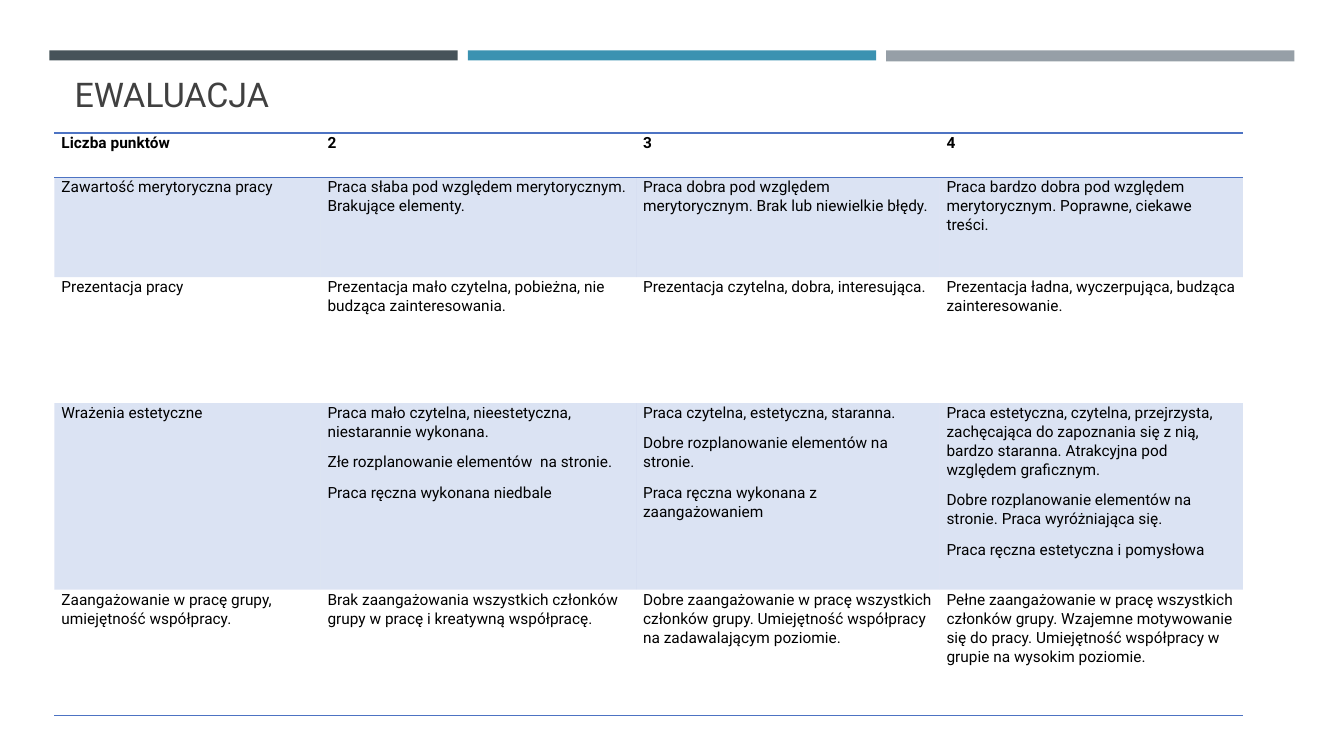
from dataclasses import dataclass

from lxml.etree import SubElement
from pptx import Presentation
from pptx.dml.color import RGBColor
from pptx.enum.shapes import MSO_AUTO_SHAPE_TYPE as ShapeType
from pptx.enum.text import MSO_ANCHOR as Anchor, MSO_AUTO_SIZE as AutoSize, PP_ALIGN as Align
from pptx.oxml.ns import qn
from pptx.slide import Slide
from pptx.table import _Cell as Cell
from pptx.util import Emu, Inches, Pt

WIDTH, HEIGHT = Inches(13.33), Inches(7.5)
FONT = "Roboto"
ACCENT = "4D73C3"
PLAIN_TABLE = "{2D5ABB26-0587-4C30-8999-92F81FD0307C}"
BAR_LEFT, BAR_STEP, BAR_WIDTH = 3.68, 31.13, 30.38
COLUMN_SHARES = (19.8, 23.48, 22.58, 22.58)
PARAGRAPH_FORMAT = {"line_spacing": 1.06, "space_after": Pt(8), "alignment": Align.LEFT}
CELL_FORMAT = {
    "margin_left": Inches(0.07),
    "margin_right": Inches(0.07),
    "margin_top": 0,
    "margin_bottom": 0,
    "vertical_anchor": Anchor.TOP,
}


@dataclass(frozen=True)
class Bar:
    color: str
    height: float


@dataclass(frozen=True)
class Criterion:
    height: float
    texts: tuple[str, ...]
    bold: bool = False
    shaded: bool = False
    borders: tuple[str, ...] = ()


BARS = (Bar("465359", 1.33), Bar("3B92B1", 1.33), Bar("969FA7", 1.47))
CRITERIA = (
    Criterion(5.87, ("Liczba punktów", "2", "3", "4"), bold=True, borders=("lnT", "lnB")),
    Criterion(13.2, (
        "Zawartość merytoryczna pracy",
        "Praca słaba pod względem merytorycznym. Brakujące elementy.",
        "Praca dobra pod względem merytorycznym. Brak lub niewielkie błędy.",
        "Praca bardzo dobra pod względem merytorycznym. Poprawne, ciekawe treści.",
    ), shaded=True),
    Criterion(16.67, (
        "Prezentacja pracy",
        "Prezentacja mało czytelna, pobieżna, nie budząca zainteresowania.",
        "Prezentacja czytelna, dobra, interesująca.",
        "Prezentacja ładna, wyczerpująca, budząca zainteresowanie.",
    )),
    Criterion(24.67, (
        "Wrażenia estetyczne",
        "Praca mało czytelna, nieestetyczna, niestarannie wykonana.\n"
        "Złe rozplanowanie elementów  na stronie.\n"
        "Praca ręczna wykonana niedbale",
        "Praca czytelna, estetyczna, staranna.\n"
        "Dobre rozplanowanie elementów na stronie.\n"
        "Praca ręczna wykonana z zaangażowaniem",
        "Praca estetyczna, czytelna, przejrzysta, zachęcająca do zapoznania się z nią, "
        "bardzo staranna. Atrakcyjna pod względem graficznym.\n"
        "Dobre rozplanowanie elementów na stronie. Praca wyróżniająca się.\n"
        "Praca ręczna estetyczna i pomysłowa",
    ), shaded=True),
    Criterion(16.67, (
        "Zaangażowanie w pracę grupy, umiejętność współpracy.",
        "Brak zaangażowania wszystkich członków grupy w pracę i kreatywną współpracę.",
        "Dobre zaangażowanie w pracę wszystkich członków grupy. "
        "Umiejętność współpracy na zadawalającym poziomie.",
        "Pełne zaangażowanie w pracę wszystkich członków grupy. Wzajemne motywowanie się "
        "do pracy. Umiejętność współpracy w grupie na wysokim poziomie.",
    ), borders=("lnB",)),
)


def across(share: float) -> Emu:
    """Turn a percentage of the slide's width into a length."""
    return Emu(round(WIDTH * share / 100))


def down(share: float) -> Emu:
    """Turn a percentage of the slide's height into a length."""
    return Emu(round(HEIGHT * share / 100))


def rgb(color: str) -> RGBColor:
    """Turn a hex string into a colour."""
    return RGBColor.from_string(color)


def apply_format(target: object, values: dict[str, object]) -> None:
    """Set every attribute named in the format values."""
    for attribute, value in values.items():
        setattr(target, attribute, value)


def format_font(font: object, size: float, color: str, bold: bool = False) -> None:
    """Give a font its face, size, weight and colour."""
    apply_format(font, {"name": FONT, "size": Pt(size), "bold": bold})
    font.color.rgb = rgb(color)


def draw_bar(slide: Slide, bar: Bar, position: int) -> None:
    """Draw one of the bars along the top."""
    left = across(BAR_LEFT + position * BAR_STEP)
    strip = slide.shapes.add_shape(
        ShapeType.RECTANGLE, left, down(6.67), across(BAR_WIDTH), down(bar.height))
    strip.shadow.inherit = False
    strip.fill.solid()
    strip.fill.fore_color.rgb = rgb(bar.color)
    strip.line.fill.background()


def write_title(slide: Slide, heading: str) -> None:
    """Place and format the title."""
    title = slide.shapes.title
    apply_format(title, {"left": across(4.8), "top": down(10.27),
                         "width": across(90.47), "height": down(5.6)})
    frame = title.text_frame
    frame.text = heading
    apply_format(frame, {"auto_size": AutoSize.NONE, "vertical_anchor": Anchor.BOTTOM,
                         "word_wrap": True})
    paragraph = frame.paragraphs[0]
    apply_format(paragraph, {"alignment": Align.LEFT, "line_spacing": 0.9})
    format_font(paragraph.runs[0].font, 24.3, "404040")


def paint_cell(cell: Cell, criterion: Criterion) -> None:
    """Shade the cell and rule its edges."""
    properties = cell._tc.get_or_add_tcPr()
    if criterion.shaded:
        cell.fill.solid()
        cell.fill.fore_color.rgb = rgb(ACCENT)
        tint = properties.find(f"{qn('a:solidFill')}/{qn('a:srgbClr')}")
        SubElement(tint, qn("a:alpha"), val="20000")
    else:
        cell.fill.background()
    for order, edge in enumerate(criterion.borders):
        rule = SubElement(properties, qn(f"a:{edge}"), w=str(Pt(1)))
        SubElement(SubElement(rule, qn("a:solidFill")), qn("a:srgbClr"), val=ACCENT)
        properties.insert(order, rule)


def write_cell(cell: Cell, text: str, criterion: Criterion) -> None:
    """Fill in one cell of the rubric."""
    cell.text_frame.text = text
    apply_format(cell, CELL_FORMAT)
    for paragraph in cell.text_frame.paragraphs:
        apply_format(paragraph, PARAGRAPH_FORMAT)
        format_font(paragraph.runs[0].font, 11, "000000", criterion.bold)
    paint_cell(cell, criterion)


def draw_rubric(slide: Slide) -> None:
    """Draw the assessment table."""
    rubric = slide.shapes.add_table(
        len(CRITERIA), len(COLUMN_SHARES), across(4.05), down(17.6),
        across(sum(COLUMN_SHARES)), down(sum(row.height for row in CRITERIA))).table
    apply_format(rubric, {"first_row": False, "horz_banding": False})
    rubric._tbl.tblPr.find(qn("a:tableStyleId")).text = PLAIN_TABLE
    for column, share in zip(rubric.columns, COLUMN_SHARES):
        column.width = across(share)
    for row, criterion in zip(rubric.rows, CRITERIA):
        row.height = down(criterion.height)
        for cell, text in zip(row.cells, criterion.texts):
            write_cell(cell, text, criterion)


def main() -> None:
    """Build the evaluation slide."""
    deck = Presentation()
    apply_format(deck, {"slide_width": WIDTH, "slide_height": HEIGHT})
    slide = deck.slides.add_slide(deck.slide_layouts.get_by_name("Title Only"))
    for position, bar in enumerate(BARS):
        draw_bar(slide, bar, position)
    write_title(slide, "EWALUACJA")
    draw_rubric(slide)
    deck.save("out.pptx")


if __name__ == "__main__":
    main()
